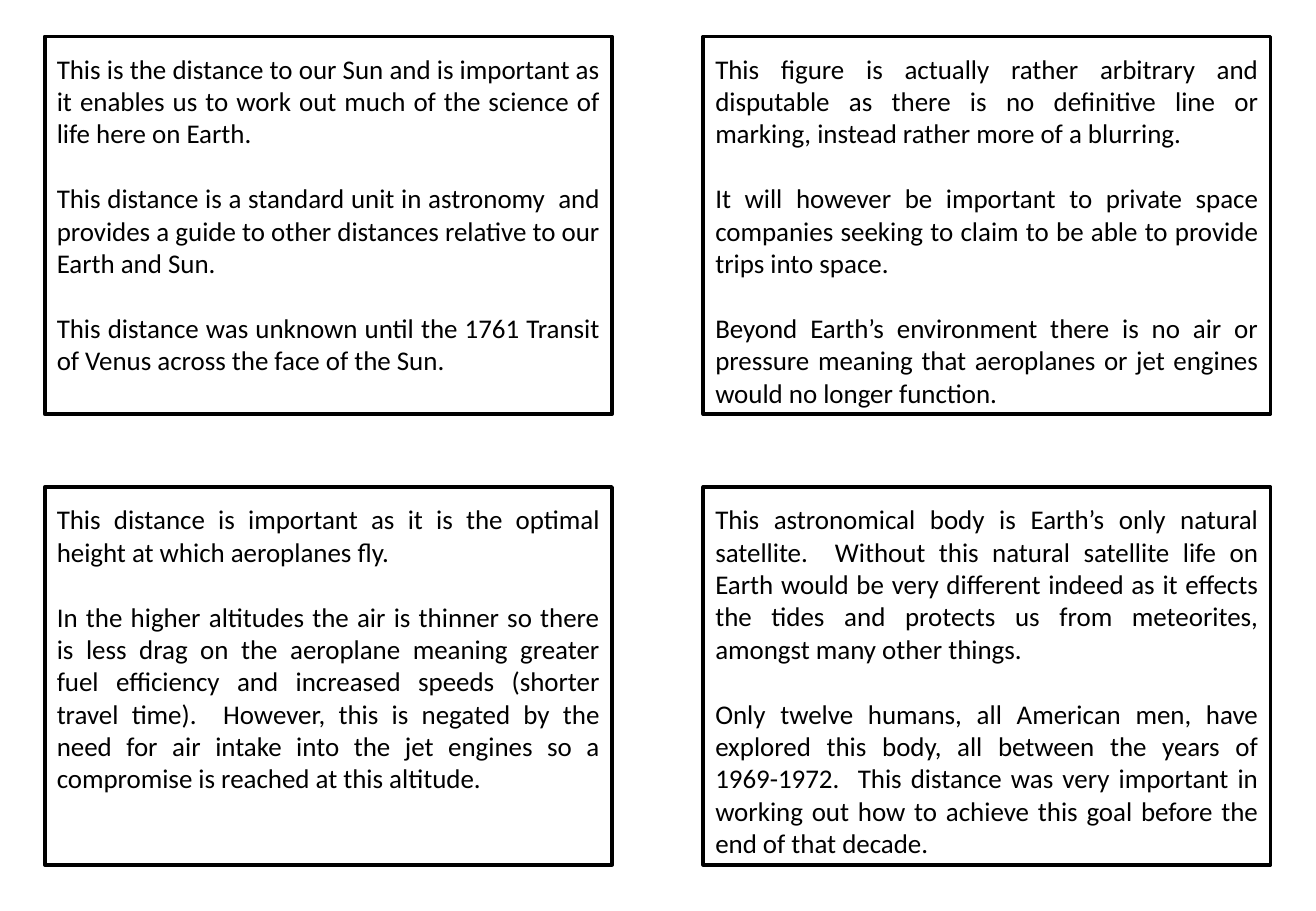
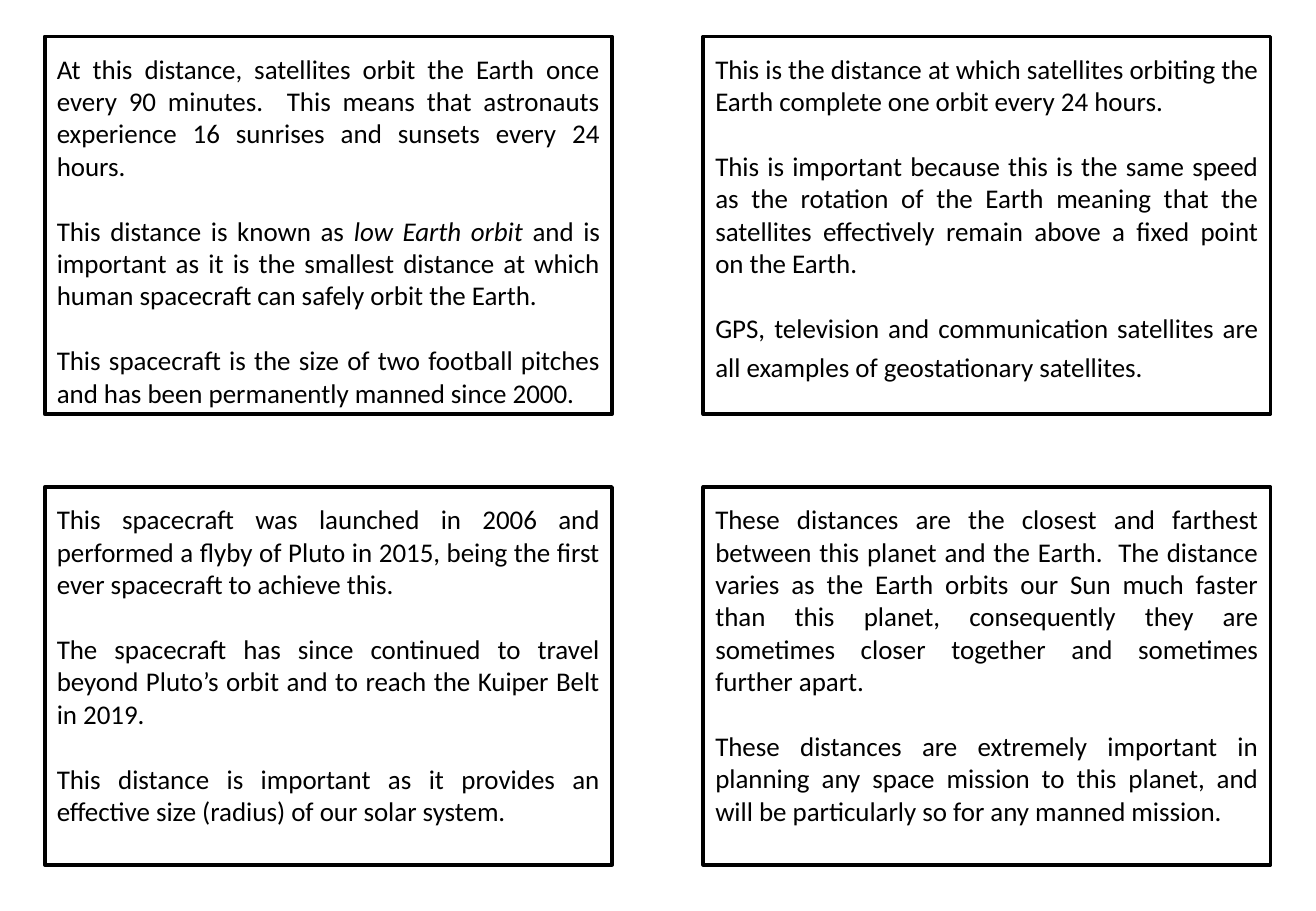
"""Build two slides of four framed fact cards about distances in space."""
from dataclasses import dataclass

from pptx import Presentation
from pptx.dml.color import RGBColor
from pptx.enum.shapes import MSO_SHAPE
from pptx.enum.text import MSO_ANCHOR, MSO_AUTO_SIZE, PP_ALIGN
from pptx.util import Pt

RECT = MSO_SHAPE.RECTANGLE
TOP = MSO_ANCHOR.TOP
GROW = MSO_AUTO_SIZE.SHAPE_TO_FIT_TEXT
JUSTIFY = PP_ALIGN.JUSTIFY
BLANK = 6


@dataclass(frozen=True)
class Theme:
    """Colours, type sizes and grid measures in points."""
    ink: RGBColor = RGBColor(0, 0, 0)
    font: str = "Calibri"
    size: float = 16
    large: float = 20
    line: float = 19.4
    gap: float = 19.3
    rule: float = 2.25
    left: float = 26.6
    top: float = 21.6
    wide: float = 336.2
    high: float = 223.9
    across: float = 390.3
    down: float = 267.1
    drop: float = 5.8
    inset: float = 7.2


THEME = Theme()
ITALIC = {"italic": True}
LARGE = {"size": Pt(THEME.large)}

SUN = (10, [
    "This is the distance to our Sun and is important as it enables us to work out much of the "
    "science of life here on Earth.",
    "This distance is a standard unit in astronomy  and provides a guide to other distances "
    "relative to our Earth and Sun.",
    "This distance was unknown until the 1761 Transit of Venus across the face of the Sun.",
])
SPACE = (11, [
    "This figure is actually rather arbitrary and disputable as there is no definitive line or "
    "marking, instead rather more of a blurring.",
    "It will however be important to private space companies seeking to claim to be able to "
    "provide trips into space.",
    "Beyond Earth’s environment there is no air or pressure meaning that aeroplanes or jet "
    "engines would no longer function.",
])
FLIGHT = (9, [
    "This distance is important as it is the optimal height at which aeroplanes fly.",
    "In the higher altitudes the air is thinner so there is less drag on the aeroplane meaning "
    "greater fuel efficiency and increased speeds (shorter travel time).  However, this is "
    "negated by the need for air intake into the jet engines so a compromise is reached at "
    "this altitude.",
])
MOON = (11, [
    "This astronomical body is Earth’s only natural satellite.  Without this natural satellite "
    "life on Earth would be very different indeed as it effects the tides and protects us from "
    "meteorites, amongst many other things.",
    "Only twelve humans, all American men, have explored this body, all between the years of "
    "1969-1972.  This distance was very important in working out how to achieve this goal "
    "before the end of that decade.",
])
STATION = (11, [
    "At this distance, satellites orbit the Earth once every 90 minutes.  This means that "
    "astronauts experience 16 sunrises and sunsets every 24 hours.",
    [("This distance is known as ", {}), ("low Earth orbit ", ITALIC),
     ("and is important as it is the smallest distance at which human spacecraft can safely "
      "orbit the Earth.", {})],
    "This spacecraft is the size of two football pitches and has been permanently manned "
    "since 2000.",
])
FIXED = (10, [
    "This is the distance at which satellites orbiting the Earth complete one orbit every "
    "24 hours.",
    "This is important because this is the same speed as the rotation of the Earth meaning "
    "that the satellites effectively remain above a fixed point on the Earth.",
    [("GPS, television and communication satellites are all examples of geostationary "
      "satellites.", {}), (" ", LARGE)],
])
PLUTO = (10, [
    "This spacecraft was launched in 2006 and performed a flyby of Pluto in 2015, being the "
    "first ever spacecraft to achieve this.",
    "The spacecraft has since continued to travel beyond Pluto’s orbit and to reach the Kuiper "
    "Belt in 2019.",
    "This distance is important as it provides an effective size (radius) of our solar system.",
])
PLANET = (10, [
    "These distances are the closest and farthest between this planet and the Earth.  The "
    "distance varies as the Earth orbits our Sun much faster than this planet, consequently "
    "they are sometimes closer together and sometimes further apart.",
    "These distances are extremely important in planning any space mission to this planet, and "
    "will be particularly so for any manned mission.",
])
DECK = [(SUN, SPACE, FLIGHT, MOON), (STATION, FIXED, PLUTO, PLANET)]


def add_frame(slide, left, top):
    """Draw the outline of a card."""
    frame = slide.shapes.add_shape(RECT, Pt(left), Pt(top), Pt(THEME.wide), Pt(THEME.high))
    frame.shadow.inherit = False
    frame.fill.background()
    frame.line.color.rgb = THEME.ink
    frame.line.width = Pt(THEME.rule)


def add_para(para, parts):
    """Fill a justified paragraph with a plain string or styled parts."""
    para.alignment = JUSTIFY
    for text, style in [(parts, {})] if isinstance(parts, str) else parts:
        run = para.add_run()
        run.text = text
        font = run.font
        font.name = THEME.font
        font.size = Pt(THEME.size)
        font.color.rgb = THEME.ink
        for key, value in style.items():
            setattr(font, key, value)


def add_text(slide, left, top, lines, paras):
    """Place the text of a card, with a line of space between paragraphs."""
    high = lines * THEME.line + THEME.inset
    box = slide.shapes.add_textbox(Pt(left), Pt(top + THEME.drop), Pt(THEME.wide), Pt(high))
    frame = box.text_frame
    frame.word_wrap = True
    frame.auto_size = GROW
    frame.vertical_anchor = TOP
    for index, parts in enumerate(paras):
        para = frame.add_paragraph() if index else frame.paragraphs[0]
        para.space_before = Pt(THEME.gap if index else 0)
        add_para(para, parts)


def add_cards(slide, cards):
    """Lay cards out in two columns, row by row."""
    for index, (lines, paras) in enumerate(cards):
        row, col = divmod(index, 2)
        left = THEME.left + col * THEME.across
        top = THEME.top + row * THEME.down
        add_frame(slide, left, top)
        add_text(slide, left, top, lines, paras)


def main():
    """Build and save the deck."""
    deck = Presentation()
    deck.slide_width, deck.slide_height = Pt(780), Pt(540)
    for cards in DECK:
        add_cards(deck.slides.add_slide(deck.slide_layouts[BLANK]), cards)
    deck.save("out.pptx")


if __name__ == "__main__":
    main()
